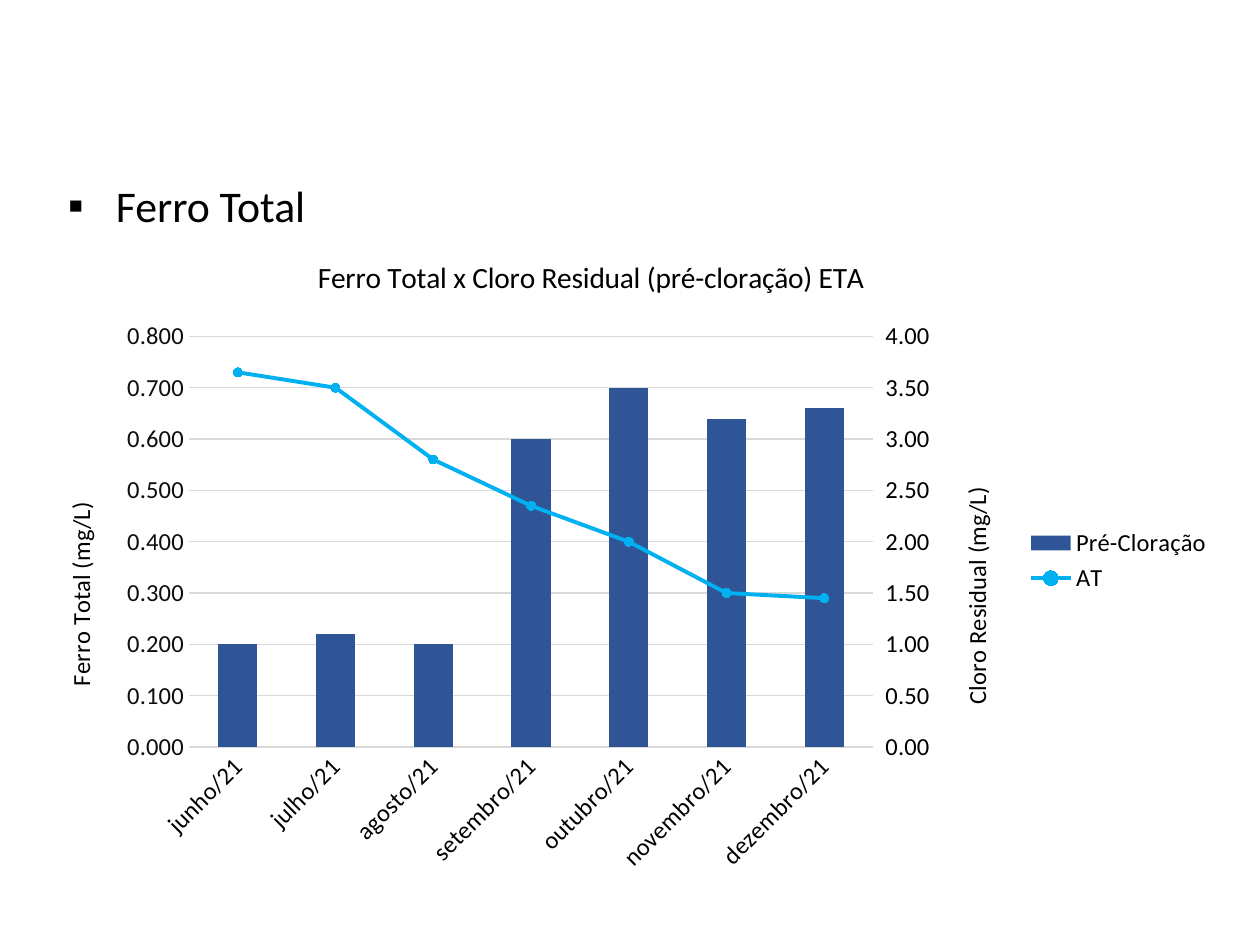
from copy import deepcopy
from dataclasses import dataclass

from lxml.etree import SubElement
from pptx import Presentation
from pptx.chart.axis import ValueAxis
from pptx.chart.data import CategoryChartData
from pptx.chart.series import LineSeries
from pptx.dml.color import RGBColor
from pptx.enum.chart import (XL_CHART_TYPE, XL_LEGEND_POSITION, XL_MARKER_STYLE,
                             XL_TICK_MARK)
from pptx.enum.text import MSO_ANCHOR, MSO_AUTO_SIZE
from pptx.oxml import parse_xml
from pptx.oxml.ns import nsdecls, qn
from pptx.util import Inches, Pt

FONT = "Calibri"
BLACK, GRID, BAR, LINE = "000000", "D9D9D9", "2F5597", "00B0F0"
CHART_WIDTH, CHART_HEIGHT = 9.43, 5.16
BAR_CATEGORY_ID, BAR_VALUE_ID = "50010", "50020"
MONTHS = ["junho", "julho", "agosto", "setembro", "outubro", "novembro", "dezembro"]
CHLORINE = [1, 1.1, 1, 3, 3.5, 3.2, 3.3]
IRON = [0.73, 0.7, 0.56, 0.47, 0.4, 0.3, 0.29]


@dataclass
class AxisStyle:
    title: str
    left: float
    top: float
    maximum: float
    step: float
    number_format: str
    color: str
    tick: XL_TICK_MARK


IRON_AXIS = AxisStyle("Ferro Total (mg/L)", 0.18, 2.08, 0.8, 0.1, "0.000",
                      "0D0D0D", XL_TICK_MARK.NONE)
CHLORINE_AXIS = AxisStyle("Cloro Residual (mg/L)", 7.29, 1.96, 4, 0.5, "#,##0.00",
                          BLACK, XL_TICK_MARK.OUTSIDE)


def rgb(color: str) -> RGBColor:
    return RGBColor.from_string(color)


def format_font(font, size: float, color: str = BLACK) -> None:
    font.name, font.size, font.bold = FONT, Pt(size), False
    font.color.rgb = rgb(color)


def set_layout(parent, index: int, left: float, top: float, **size: float) -> None:
    """Place a chart part; lengths are inches from the chart's corner."""
    for old in parent.findall(qn("c:layout")):
        parent.remove(old)
    layout = parse_xml(f"<c:layout {nsdecls('c')}><c:manualLayout/></c:layout>")
    values = {"layoutTarget": "inner"} if size else {}
    values |= {"xMode": "edge", "yMode": "edge",
               "x": left / CHART_WIDTH, "y": top / CHART_HEIGHT}
    if size:
        values |= {"w": size["width"] / CHART_WIDTH, "h": size["height"] / CHART_HEIGHT}
    for name, value in values.items():
        SubElement(layout[0], qn(f"c:{name}")).set("val", str(value))
    parent.insert(index, layout)


def write_title(owner, text: str, size: float, left: float, top: float,
                rotation: int = 0) -> None:
    """Write the title of a chart or an axis at a fixed place."""
    owner.has_title = True
    title = owner.chart_title if hasattr(owner, "chart_title") else owner.axis_title
    frame = title.text_frame
    span = frame.paragraphs[0].add_run()
    span.text = text
    format_font(span.font, size)
    body = frame._txBody.find(qn("a:bodyPr"))
    body.set("rot", str(rotation * 60000))
    body.set("vert", "horz")
    set_layout(title._element, 1, left, top)


def style_value_axis(axis: ValueAxis, style: AxisStyle) -> None:
    axis.minimum_scale, axis.maximum_scale = 0, style.maximum
    axis.major_unit = style.step
    axis.major_tick_mark = style.tick
    axis.minor_tick_mark = XL_TICK_MARK.NONE
    axis.format.line.fill.background()
    axis.tick_labels.number_format = style.number_format
    axis.tick_labels.number_format_is_linked = False
    format_font(axis.tick_labels.font, 14, style.color)
    write_title(axis, style.title, 14, style.left, style.top, rotation=-90)


def move_to_line_plot(chart) -> LineSeries:
    """Draw the second series as a line on the axes the bars had."""
    bars = chart.plots[0]._element
    line_plot = parse_xml(
        f"<c:lineChart {nsdecls('c')}><c:grouping val='standard'/>"
        "<c:varyColors val='0'/><c:marker val='1'/></c:lineChart>")
    series = bars.findall(qn("c:ser"))[1]
    for invert in series.findall(qn("c:invertIfNegative")):
        series.remove(invert)
    line_plot.insert(2, series)
    for axis_id, new_id in zip(bars.findall(qn("c:axId")),
                               (BAR_CATEGORY_ID, BAR_VALUE_ID)):
        line_plot.append(deepcopy(axis_id))
        axis_id.set("val", new_id)
    bars.addnext(line_plot)
    return LineSeries(series)


def add_right_axis(chart) -> ValueAxis:
    """Add the right value axis of the bars and its unseen category axis."""
    category = deepcopy(chart.category_axis._element)
    value = deepcopy(chart.value_axis._element)
    for element, own, other in ((category, BAR_CATEGORY_ID, BAR_VALUE_ID),
                                (value, BAR_VALUE_ID, BAR_CATEGORY_ID)):
        element.find(qn("c:axId")).set("val", own)
        element.find(qn("c:crossAx")).set("val", other)
    category.find(qn("c:delete")).set("val", "1")
    value.find(qn("c:axPos")).set("val", "r")
    value.find(qn("c:crosses")).set("val", "max")
    chart.value_axis._element.addnext(value)
    value.addnext(category)
    axis = ValueAxis(value)
    axis.has_major_gridlines = False
    return axis


def add_heading(page) -> None:
    page.shapes.title._element.getparent().remove(page.shapes.title._element)
    box = page.placeholders[1]
    box.left, box.top = Inches(0.44), Inches(1.37)
    box.width, box.height = Inches(2.1), Inches(0.52)
    frame = box.text_frame
    frame.word_wrap = False
    frame.auto_size = MSO_AUTO_SIZE.SHAPE_TO_FIT_TEXT
    frame.vertical_anchor = MSO_ANCHOR.TOP
    para = frame.paragraphs[0]
    para.text = "Ferro Total"
    para.space_before = Pt(0)
    properties = para._p.get_or_add_pPr()
    properties.set("marL", str(Inches(0.38)))
    properties.set("indent", str(Inches(-0.38)))
    SubElement(properties, qn("a:buFont")).set("typeface", FONT)
    SubElement(properties, qn("a:buChar")).set("char", "▪")
    format_font(para.runs[0].font, 25)


def add_iron_chart(page) -> None:
    data = CategoryChartData()
    data.categories = [f"{month}/21" for month in MONTHS]
    data.add_series("Pré-Cloração", CHLORINE)
    data.add_series("AT", IRON)
    chart = page.shapes.add_chart(
        XL_CHART_TYPE.COLUMN_CLUSTERED, Inches(0.29), Inches(1.87),
        Inches(CHART_WIDTH), Inches(CHART_HEIGHT), data).chart
    format_font(chart.font, 14)
    write_title(chart, "Ferro Total x Cloro Residual (pré-cloração) ETA", 16.8, 2.19, 0.13)

    bars = chart.plots[0]
    bars.gap_width, bars.vary_by_categories = 150, False
    bars.series[0].format.fill.solid()
    bars.series[0].format.fill.fore_color.rgb = rgb(BAR)
    line = move_to_line_plot(chart)
    line.smooth = False
    line.format.line.color.rgb = rgb(LINE)
    line.format.line.width = Pt(2.25)
    line.marker.style, line.marker.size = XL_MARKER_STYLE.CIRCLE, 5
    line.marker.format.fill.solid()
    line.marker.format.fill.fore_color.rgb = rgb(LINE)
    line.marker.format.line.color.rgb = rgb(LINE)

    months, left_axis = chart.category_axis, chart.value_axis
    style_value_axis(add_right_axis(chart), CHLORINE_AXIS)
    style_value_axis(left_axis, IRON_AXIS)
    months.major_tick_mark = XL_TICK_MARK.NONE
    format_font(months.tick_labels.font, 14)
    months._element.find(qn("c:txPr")).find(qn("a:bodyPr")).set("rot", str(-45 * 60000))
    for rule in (months.format.line, left_axis.major_gridlines.format.line):
        rule.color.rgb = rgb(GRID)
        rule.width = Pt(0.75)

    chart.has_legend = True
    chart.legend.position = XL_LEGEND_POSITION.RIGHT
    chart.legend.include_in_layout = False
    format_font(chart.legend.font, 14)
    set_layout(bars._element.getparent(), 0, 1.21, 0.8, width=5.43, height=3.26)


def main() -> None:
    deck = Presentation()
    deck.slide_width, deck.slide_height = Inches(10), Inches(7.5)
    page = deck.slides.add_slide(deck.slide_layouts[1])
    add_heading(page)
    add_iron_chart(page)
    deck.save("out.pptx")


if __name__ == "__main__":
    main()
